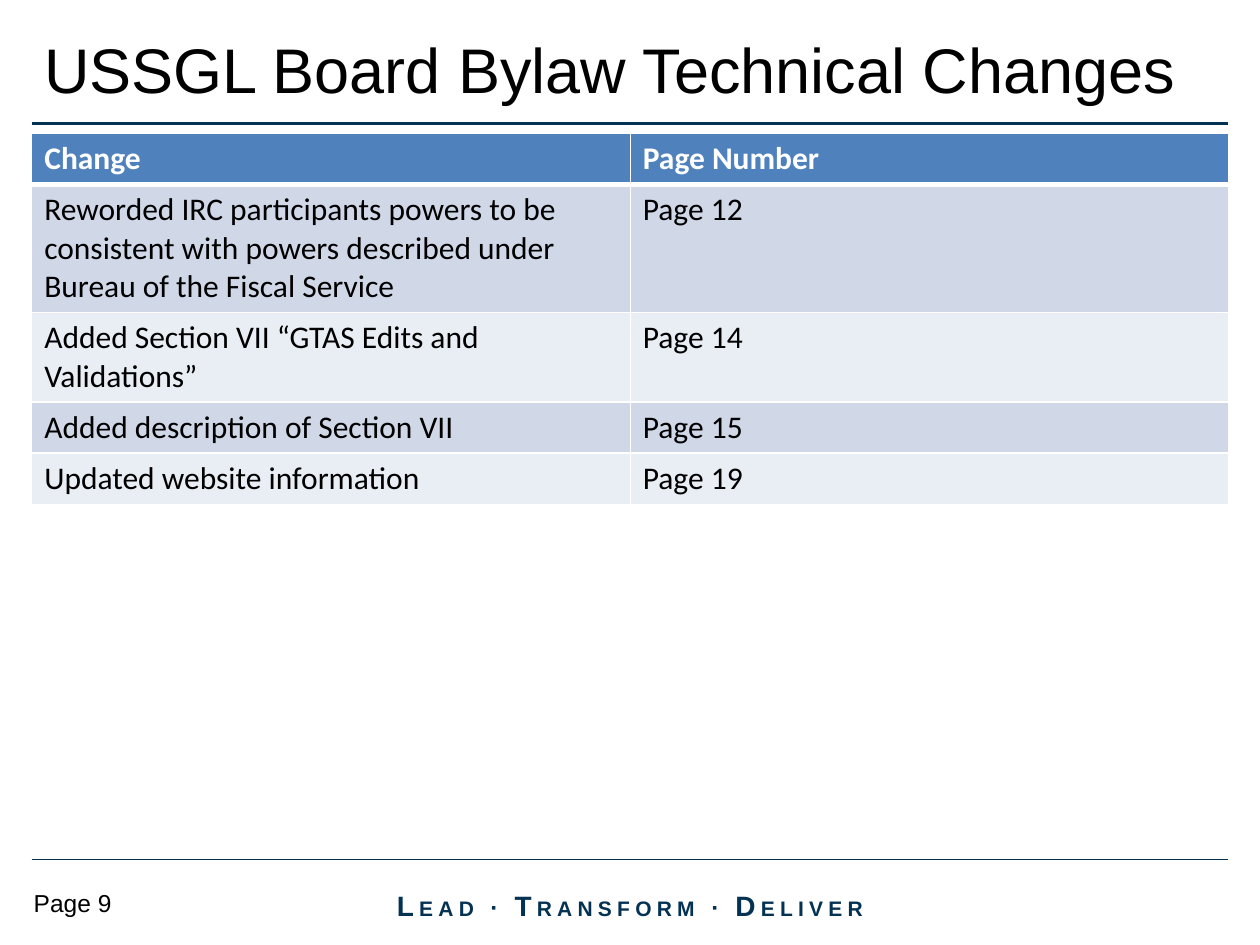
import pptx
import pptx.util
import pptx.dml.color
import pptx.enum.shapes
import pptx.enum.text
import pptx.oxml.ns
import lxml.etree

Cm = pptx.util.Cm
Pt = pptx.util.Pt
ALIGN = pptx.enum.text.PP_ALIGN
ANCHOR = pptx.enum.text.MSO_ANCHOR
NAVY = "043253"


def color(hex_value):
    return pptx.dml.color.RGBColor.from_string(hex_value)


def write(frame, text, size=18, font="Arial", ink="000000", bold=False,
          align=ALIGN.LEFT, anchor=ANCHOR.TOP, spacing=None):
    frame.word_wrap = True
    frame.auto_size = pptx.enum.text.MSO_AUTO_SIZE.NONE
    frame.vertical_anchor = anchor
    paragraph = frame.paragraphs[0]
    paragraph.alignment = align
    pieces = [(text, size)] if isinstance(text, str) else text
    for piece, piece_size in pieces:
        run = paragraph.add_run()
        run.text = piece
        run.font.size = Pt(piece_size)
        run.font.name = font
        run.font.bold = bold
        run.font.color.rgb = color(ink)
        if spacing:
            run.font._element.set("spc", str(spacing * 100))


deck = pptx.Presentation()
deck.slide_width, deck.slide_height = Cm(25.4), Cm(19.05)
slide = deck.slides.add_slide(deck.slide_layouts[5])

for rule_y, rule_width in [(17.32, 0.75), (2.49, 2.25)]:
    rule = slide.shapes.add_connector(
        pptx.enum.shapes.MSO_CONNECTOR.STRAIGHT,
        Cm(0.64), Cm(rule_y), Cm(24.76), Cm(rule_y))
    rule.line.color.rgb = color(NAVY)
    rule.line.width = Pt(rule_width)
    lxml.etree.SubElement(rule._element.spPr, pptx.oxml.ns.qn("a:effectLst"))

motto = slide.shapes.add_textbox(Cm(7.19), Cm(17.75), Cm(11.02), Cm(1.02))
write(motto.text_frame,
      [("L", 16), ("EAD ", 12), ("∙ ", 14), ("T", 16), ("RANSFORM ", 12),
       ("∙ ", 14), ("D", 16), ("ELIVER", 12)],
      ink=NAVY, bold=True, align=ALIGN.CENTER, anchor=ANCHOR.MIDDLE, spacing=3)

page_label = slide.shapes.add_textbox(Cm(0.43), Cm(17.78), Cm(3.18), Cm(0.84))
write(page_label.text_frame, "Page 9", size=14)

changes = [
    ("Change", "Page Number"),
    ("Reworded IRC participants powers to be consistent with powers described "
     "under Bureau of the Fiscal Service", "Page 12"),
    ("Added Section VII “GTAS Edits and Validations”", "Page 14"),
    ("Added description of Section VII", "Page 15"),
    ("Updated website information", "Page 19"),
]
row_height = Cm(1.03)
table = slide.shapes.add_table(len(changes), 2, Cm(0.64), Cm(2.69),
                               Cm(24.13), row_height * len(changes)).table
for row_index, entries in enumerate(changes):
    is_header = row_index == 0
    table.rows[row_index].height = row_height
    for column_index, entry in enumerate(entries):
        cell = table.cell(row_index, column_index)
        write(cell.text_frame, entry, font="Calibri", bold=is_header,
              ink="FFFFFF" if is_header else "000000")
        cell_properties = cell._tc.get_or_add_tcPr()
        for side in "LRTB":
            heavy = (is_header and side == "B") or (row_index == 1 and side == "T")
            border = lxml.etree.SubElement(
                cell_properties, pptx.oxml.ns.qn("a:ln" + side),
                w=str(Pt(3 if heavy else 1)))
            border_fill = lxml.etree.SubElement(border, pptx.oxml.ns.qn("a:solidFill"))
            lxml.etree.SubElement(border_fill, pptx.oxml.ns.qn("a:srgbClr"), val="FFFFFF")
        cell.fill.solid()
        band = "D0D8E8" if row_index % 2 else "E9EDF4"
        cell.fill.fore_color.rgb = color("4F81BD" if is_header else band)

title = slide.shapes.title
title.left, title.top, title.width, title.height = Cm(0.64), Cm(0.43), Cm(24.13), Cm(1.9)
write(title.text_frame, "USSGL Board Bylaw Technical Changes", size=36,
      anchor=ANCHOR.MIDDLE)

deck.save("out.pptx")
